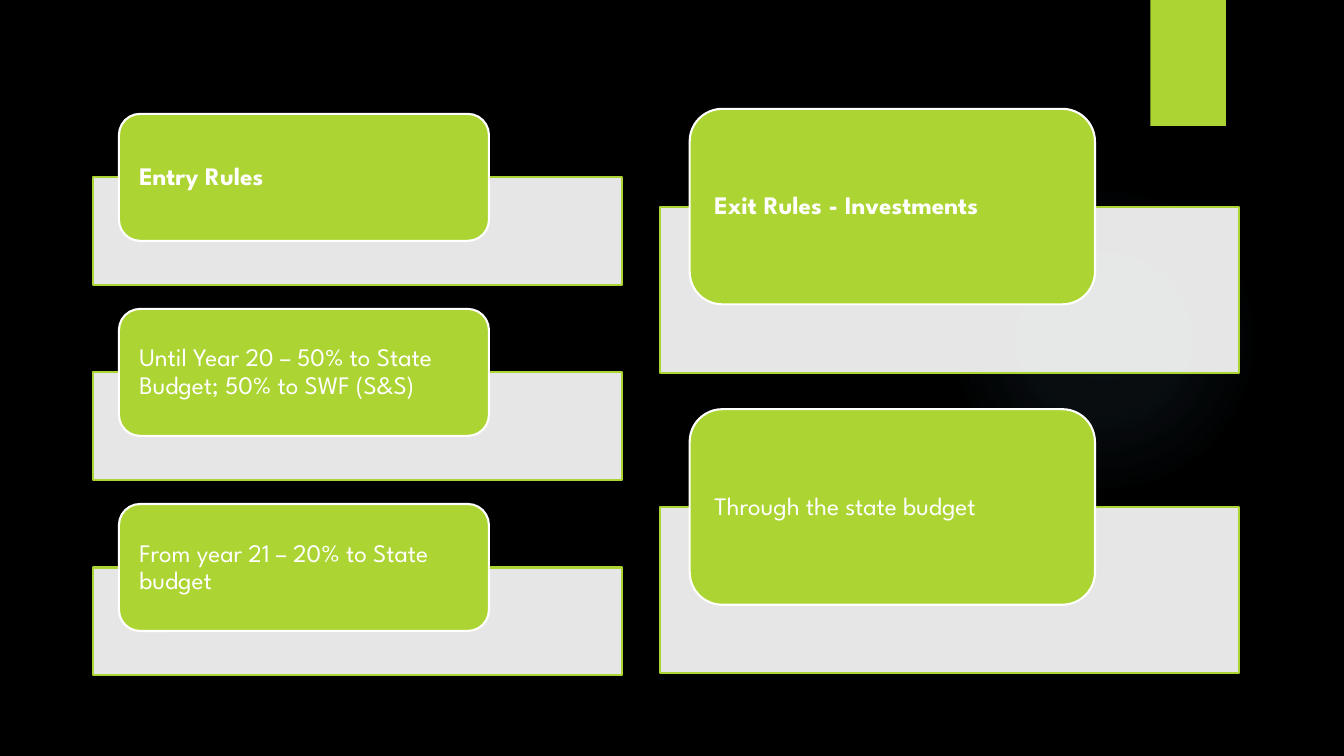
from dataclasses import dataclass

from lxml import etree
from pptx import Presentation
from pptx.dml.color import RGBColor
from pptx.enum import shapes, text
from pptx.oxml import parse_xml
from pptx.oxml.ns import nsdecls, qn
from pptx.util import Inches, Pt


@dataclass(frozen=True)
class Theme:
    background: str = "000000"
    green: str = "ACD433"
    white: str = "FFFFFF"
    glow: str = "7AC4F0"
    font: str = "League Spartan"
    size: float = 18
    line: float = 1.5
    panel_alpha: int = 90


@dataclass(frozen=True)
class Column:
    left: float
    top: float
    step: float
    panel: tuple
    panel_drop: float
    card: tuple
    card_indent: float
    inset: float
    rules: tuple


THEME = Theme()
ENTRY = Column(
    left=0.92, top=1.13, step=1.935, panel=(5.25, 1.07), panel_drop=0.63,
    card=(3.67, 1.26), card_indent=0.26, inset=0.14,
    rules=(
        "Entry Rules",
        "Until Year 20 – 50% to State Budget; 50% to SWF (S&S)",
        "From year 21 – 20% to State budget",
    ),
)
EXIT = Column(
    left=6.55, top=1.08, step=2.98, panel=(5.74, 1.65), panel_drop=0.97,
    card=(4.02, 1.94), card_indent=0.29, inset=0.15,
    rules=("Exit Rules - Investments", "Through the state budget"),
)


def rgb(color):
    return RGBColor.from_string(color)


def add_block(parent, kind, left, top, width, height, fill, line=None):
    sp = parent.add_shape(
        kind, Inches(left), Inches(top), Inches(width), Inches(height))
    sp.shadow.inherit = False
    sp.fill.solid()
    sp.fill.fore_color.rgb = rgb(fill)
    if line:
        sp.line.color.rgb = rgb(line)
        sp.line.width = Pt(THEME.line)
    else:
        sp.line.fill.background()
    return sp


def set_alpha(sp, percent):
    color = sp._element.spPr.find(qn("a:solidFill"))[0]
    etree.SubElement(color, qn("a:alpha"), val=str(percent * 1000))


def add_glow(s):
    sp = add_block(s.shapes, shapes.MSO_SHAPE.OVAL,
                   9.41, 1.83, 3.08, 3.08, THEME.glow)
    stops = "".join(
        f'<a:gs pos="{pos * 1000}"><a:srgbClr val="{THEME.glow}">'
        f'<a:alpha val="{alpha * 1000}"/></a:srgbClr></a:gs>'
        for pos, alpha in ((0, 7), (36, 6), (69, 0)))
    gradient = parse_xml(
        f'<a:gradFill {nsdecls("a")}><a:gsLst>{stops}</a:gsLst>'
        '<a:path path="circle"><a:fillToRect l="50000" t="50000" '
        'r="50000" b="50000"/></a:path></a:gradFill>')
    sp_pr = sp._element.spPr
    sp_pr.replace(sp_pr.find(qn("a:solidFill")), gradient)


def add_rule_text(sp, rule, inset, bold):
    tf = sp.text_frame
    tf.text = rule
    tf.word_wrap = True
    tf.vertical_anchor = text.MSO_ANCHOR.MIDDLE
    tf.margin_left = tf.margin_right = Inches(inset)
    tf.margin_top = tf.margin_bottom = 0
    p = tf.paragraphs[0]
    p.alignment = text.PP_ALIGN.LEFT
    p.line_spacing = 0.9
    font = p.runs[0].font
    font.name = THEME.font
    font.size = Pt(THEME.size)
    font.bold = bold
    font.color.rgb = rgb(THEME.white)


def add_column(s, column):
    group = s.shapes.add_group_shape().shapes
    for i, rule in enumerate(column.rules):
        top = column.top + i * column.step
        panel = add_block(group, shapes.MSO_SHAPE.RECTANGLE, column.left,
                          top + column.panel_drop, *column.panel,
                          THEME.white, THEME.green)
        set_alpha(panel, THEME.panel_alpha)
        card = add_block(group, shapes.MSO_SHAPE.ROUNDED_RECTANGLE,
                         column.left + column.card_indent, top, *column.card,
                         THEME.green, THEME.white)
        add_rule_text(card, rule, column.inset, bold=i == 0)


def main():
    prs = Presentation()
    prs.slide_width = Inches(13.33)
    prs.slide_height = Inches(7.5)
    s = prs.slides.add_slide(prs.slide_layouts[6])
    s.background.fill.solid()
    s.background.fill.fore_color.rgb = rgb(THEME.background)
    add_glow(s)
    add_block(s.shapes, shapes.MSO_SHAPE.RECTANGLE,
              11.41, 0, 0.75, 1.25, THEME.green)
    for column in (ENTRY, EXIT):
        add_column(s, column)
    prs.save("out.pptx")


if __name__ == "__main__":
    main()
